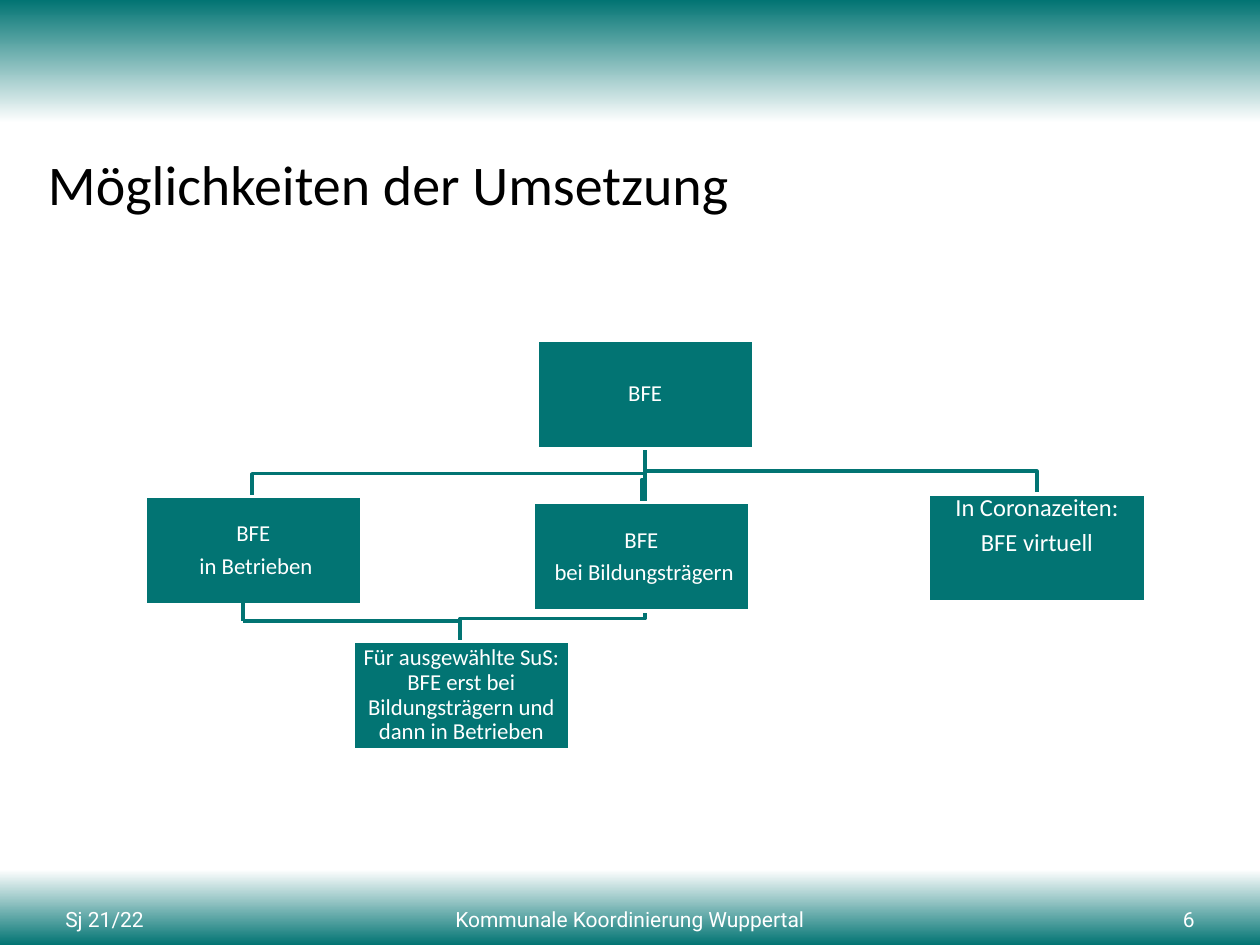
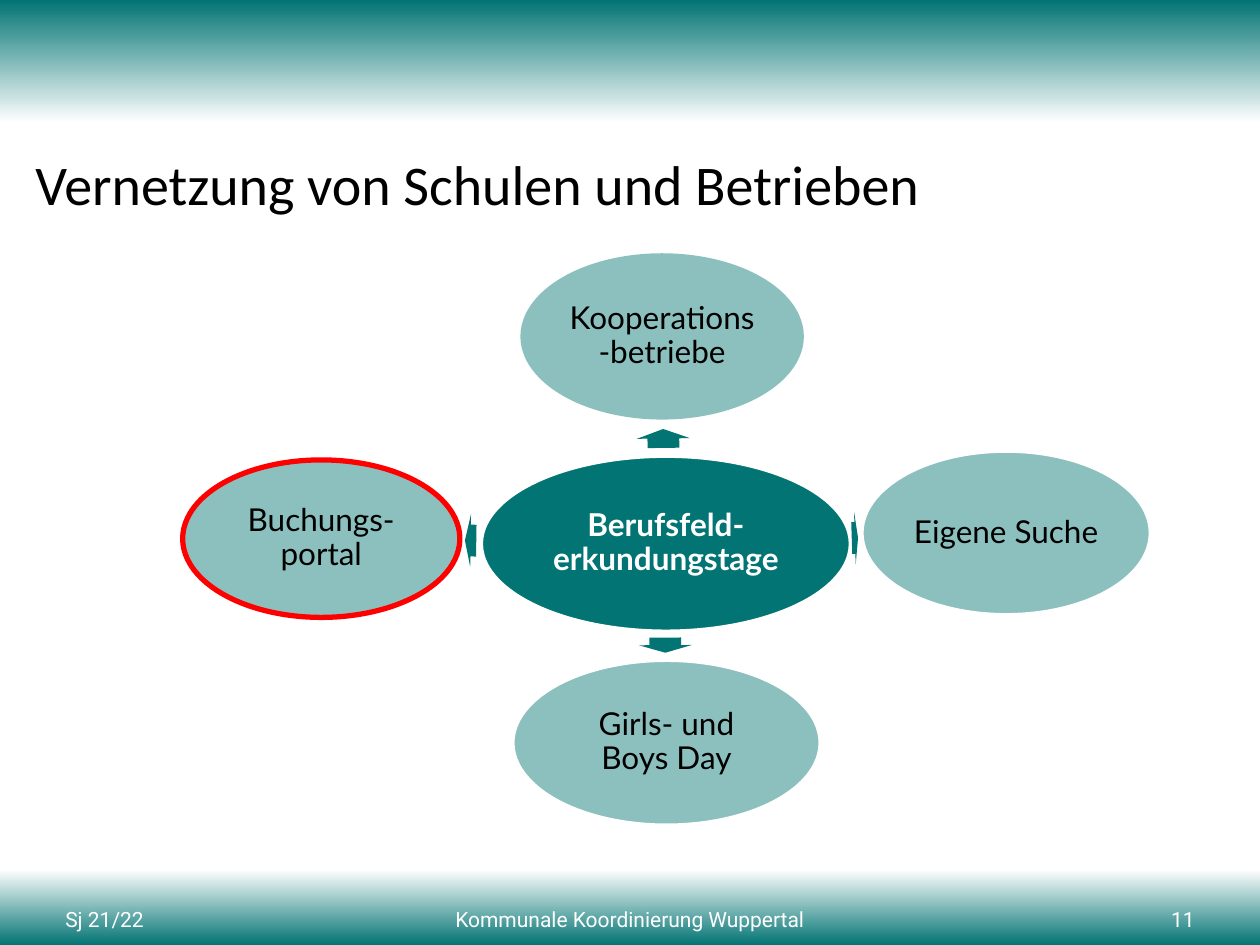
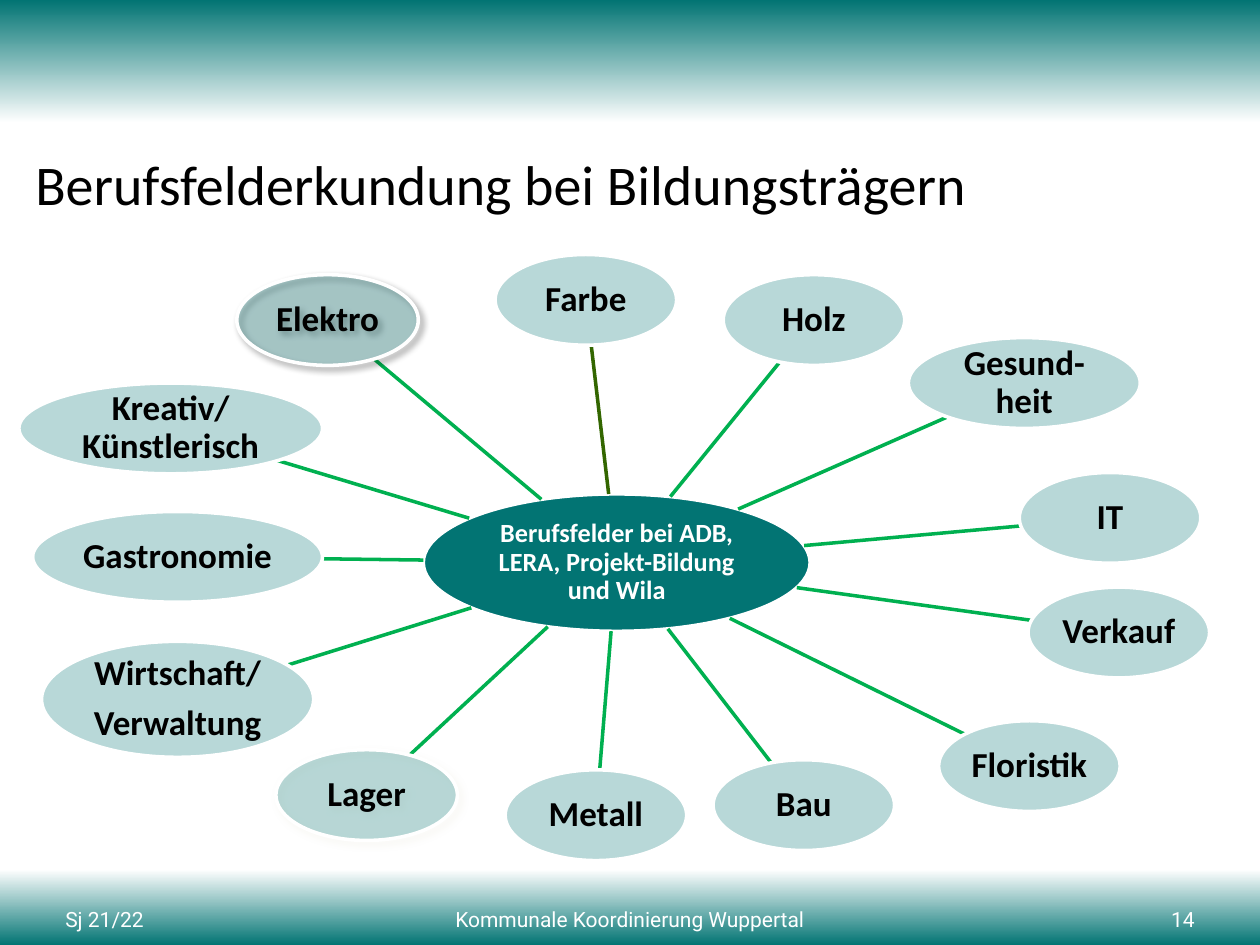
from math import hypot

from lxml import etree
from pptx import Presentation
from pptx import util as u
from pptx.dml.color import RGBColor
from pptx.enum import shapes, text
from pptx.oxml.ns import qn

TEAL, WHITE, BLACK = "027473", "FFFFFF", "000000"
RED, GREEN, OLIVE, CREAM = "FF0000", "00B050", "336600", "EEECE1"
BACKGROUND = [(0, TEAL), (13, WHITE), (52, WHITE), (92, WHITE), (100, TEAL)]
ALIGN = text.PP_ALIGN
MIDDLE = text.MSO_ANCHOR.MIDDLE
TOP = text.MSO_ANCHOR.TOP


def rgb(color):
    return RGBColor.from_string(color)


def inches(*values):
    return [u.Inches(v) for v in values]


def add_xml(parent, tag, **attributes):
    values = {name: str(value) for name, value in attributes.items()}
    return etree.SubElement(parent, qn(tag), values)


def set_background(master):
    fill = master.background.fill
    fill.gradient()
    fill.gradient_angle = 270
    stops = master.element.find(".//" + qn("a:gsLst"))
    for stop in list(stops):
        stops.remove(stop)
    for position, color in BACKGROUND:
        stop = add_xml(stops, "a:gs", pos=position * 1000)
        add_xml(stop, "a:srgbClr", val=color)


def set_text(tf, content, size, color, font="Calibri", bold=False,
             align=ALIGN.CENTER, anchor=MIDDLE, insets=(0.1, 0.05, 0.1, 0.05)):
    tf.word_wrap = True
    tf.auto_size = text.MSO_AUTO_SIZE.NONE
    tf.vertical_anchor = anchor
    tf.margin_left, tf.margin_top, tf.margin_right, tf.margin_bottom = inches(*insets)
    tf.text = content
    for p in tf.paragraphs:
        p.alignment = align
        for r in p.runs:
            r.font.name = font
            r.font.size = u.Pt(size)
            r.font.bold = bold
            r.font.color.rgb = rgb(color)


def set_label(sp, content, size, color, inset=0.01, **style):
    set_text(sp.text_frame, content, size, color, insets=(inset,) * 4, **style)
    for p in sp.text_frame.paragraphs:
        p.line_spacing = 0.9
        p.space_after = u.Pt(0.35 * size)


def set_line(line, color, width=2):
    if color is None:
        line.fill.background()
    else:
        line.color.rgb = rgb(color)
        line.width = u.Pt(width)


def add_filled(s, kind, box, line=WHITE, width=2, alpha=100):
    sp = s.shapes.add_shape(kind, *inches(*box))
    sp.shadow.inherit = False
    sp.fill.solid()
    sp.fill.fore_color.rgb = rgb(TEAL)
    if alpha < 100:
        color = sp.element.spPr.find(".//" + qn("a:srgbClr"))
        add_xml(color, "a:alpha", val=alpha * 1000)
    set_line(sp.line, line, width)
    return sp


def add_ellipse(s, box, **style):
    return add_filled(s, shapes.MSO_SHAPE.OVAL, box, **style)


def add_shadow(sp, color):
    effects = sp.element.spPr.find(qn("a:effectLst"))
    shadow = add_xml(effects, "a:outerShdw", blurRad=u.Pt(4), dist=u.Pt(3),
                     dir=45 * 60000, algn="tl", rotWithShape=0)
    add_xml(add_xml(shadow, "a:srgbClr", val=color), "a:alpha", val=40000)


def add_line(s, start, end, color):
    cx = s.shapes.add_connector(shapes.MSO_CONNECTOR.STRAIGHT, *inches(*start, *end))
    set_line(cx.line, color)
    add_xml(cx.element.spPr, "a:effectLst")


def add_branch(s, start, end):
    bend = end[1] - 0.18
    points = [(start[0], bend), (end[0], bend), end]
    builder = s.shapes.build_freeform(*inches(*start))
    builder.add_line_segments([inches(*point) for point in points], close=False)
    sp = builder.convert_to_shape()
    sp.shadow.inherit = False
    sp.fill.background()
    set_line(sp.line, TEAL)


def add_arrow(s, box, rotation):
    sp = add_filled(s, shapes.MSO_SHAPE.RIGHT_ARROW, box, line=None)
    sp.adjustments[0], sp.adjustments[1] = 0.6, 0.5
    sp.rotation = rotation


def center(box):
    left, top, width, height = box
    return left + width / 2, top + height / 2


def edge_point(box, target):
    x, y = center(box)
    dx, dy = target[0] - x, target[1] - y
    scale = 1 / hypot(dx / (box[2] / 2), dy / (box[3] / 2))
    return x + dx * scale, y + dy * scale


def add_slide(prs, title, number):
    s = prs.slides.add_slide(prs.slide_layouts[5])
    sp = s.shapes.title
    sp.left, sp.top, sp.width, sp.height = inches(0.28, 1.14, 9.45, 0.58)
    set_text(sp.text_frame, title, 32, BLACK, align=ALIGN.LEFT, anchor=TOP,
             insets=(0, 0.05, 0.1, 0.05))
    footers = [
        (0.42, 1.26, "Sj 21/22", ALIGN.LEFT),
        (3.03, 3.94, "Kommunale Koordinierung Wuppertal", ALIGN.CENTER),
        (8.32, 1.26, str(number), ALIGN.RIGHT),
    ]
    for left, width, content, align in footers:
        footer = s.shapes.add_textbox(*inches(left, 7.14, width, 0.31))
        set_text(footer.text_frame, content, 12, WHITE, font="Roboto", align=align)
    return s


def add_options_slide(prs):
    s = add_slide(prs, " Möglichkeiten der Umsetzung", 6)
    width, height = 1.72, 0.86
    root = (5.12, 3.56)
    for end in [(8.23, 3.92), (3.65, 5.09), (2, 3.94), (5.09, 3.99)]:
        add_branch(s, root, end)
    boxes = [
        (4.26, 2.7, "BFE", 13, MIDDLE),
        (4.23, 3.99, "BFE\n bei Bildungsträgern", 13, MIDDLE),
        (1.15, 3.94, "BFE\n in Betrieben", 13, MIDDLE),
        (2.8, 5.09, "Für ausgewählte SuS: BFE erst bei Bildungsträgern "
                    "und dann in Betrieben", 13, MIDDLE),
        (7.37, 3.92, "In Coronazeiten:\nBFE virtuell", 14, TOP),
    ]
    for left, top, content, size, anchor in boxes:
        sp = add_filled(s, shapes.MSO_SHAPE.RECTANGLE, (left, top, width, height))
        set_label(sp, content, size, WHITE, anchor=anchor)
    corner = (1.93, 4.93)
    add_line(s, corner, (3.66, 4.93), TEAL)
    add_line(s, (1.93, 4.77), corner, TEAL)


def add_network_slide(prs):
    s = add_slide(prs, "Vernetzung von Schulen und Betrieben", 11)
    hub = add_ellipse(s, (3.82, 3.62, 2.93, 1.39))
    set_label(hub, "Berufsfeld-erkundungstage", 18, WHITE, 0.03, font="Lato", bold=True)
    partners = [
        ("Kooperations-betriebe", (4.13, 2.01, 2.25, 1.32), None, 2,
         (5.19, 3.27, 0.15, 0.42), 269.2),
        ("Eigene Suche", (6.84, 3.58, 2.29, 1.3), WHITE, 2,
         (6.76, 4.06, 0.05, 0.42), 358.2),
        ("Girls- und Boys Day", (4.07, 5.24, 2.44, 1.31), WHITE, 2,
         (5.22, 4.91, 0.12, 0.42), 89.7),
        ("Buchungs-portal", (1.45, 3.65, 2.2, 1.25), RED, 3,
         (3.69, 4.08, 0.09, 0.42), 180.9),
    ]
    for content, box, line, width, arrow, rotation in partners:
        add_arrow(s, arrow, rotation)
        sp = add_ellipse(s, box, line=line, width=width, alpha=45)
        set_label(sp, content, 18, BLACK, 0.03, font="Lato")


def add_fields_slide(prs):
    s = add_slide(prs, "Berufsfelderkundung bei Bildungsträgern", 14)
    hub = (3.36, 3.92, 3.07, 1.09)
    set_label(add_ellipse(s, hub),
              "Berufsfelder bei ADB, LERA, Projekt-Bildung und Wila",
              15, WHITE, bold=True)
    width, height = 1.44, 0.72
    fields = [
        ("Farbe", (3.93, 2.02, width, height)),
        ("Holz", (5.74, 2.18, width, height)),
        ("Gesund-heit", (7.21, 2.68, 1.84, height)),
        ("IT", (8.09, 3.75, width, height)),
        ("Verkauf", (8.16, 4.66, width, height)),
        ("Floristik", (7.45, 5.72, width, height)),
        ("Bau", (5.66, 6.03, width, height)),
        ("Metall", (4.01, 6.11, width, height)),
        ("Wirtschaft/\nVerwaltung", (0.33, 5.09, 2.16, 0.92)),
        ("Lager", (2.19, 5.95, width, height)),
        ("Gastronomie", (0.26, 4.06, 2.3, height)),
        ("Kreativ/ Künstlerisch", (0.15, 3.04, 2.41, height)),
        ("Elektro", (1.88, 2.18, width, height)),
    ]
    line_colors = {"Farbe": OLIVE}
    shadows = {"Lager": CREAM, "Elektro": BLACK}
    for content, box in fields:
        add_line(s, edge_point(hub, center(box)), edge_point(box, center(hub)),
                 line_colors.get(content, GREEN))
        sp = add_ellipse(s, box, alpha=28)
        set_label(sp, content, 20, BLACK, bold=True)
        if content in shadows:
            add_shadow(sp, shadows[content])


def main():
    prs = Presentation()
    prs.slide_width, prs.slide_height = inches(10, 7.5)
    set_background(prs.slide_master)
    add_options_slide(prs)
    add_network_slide(prs)
    add_fields_slide(prs)
    prs.save("out.pptx")


if __name__ == "__main__":
    main()
